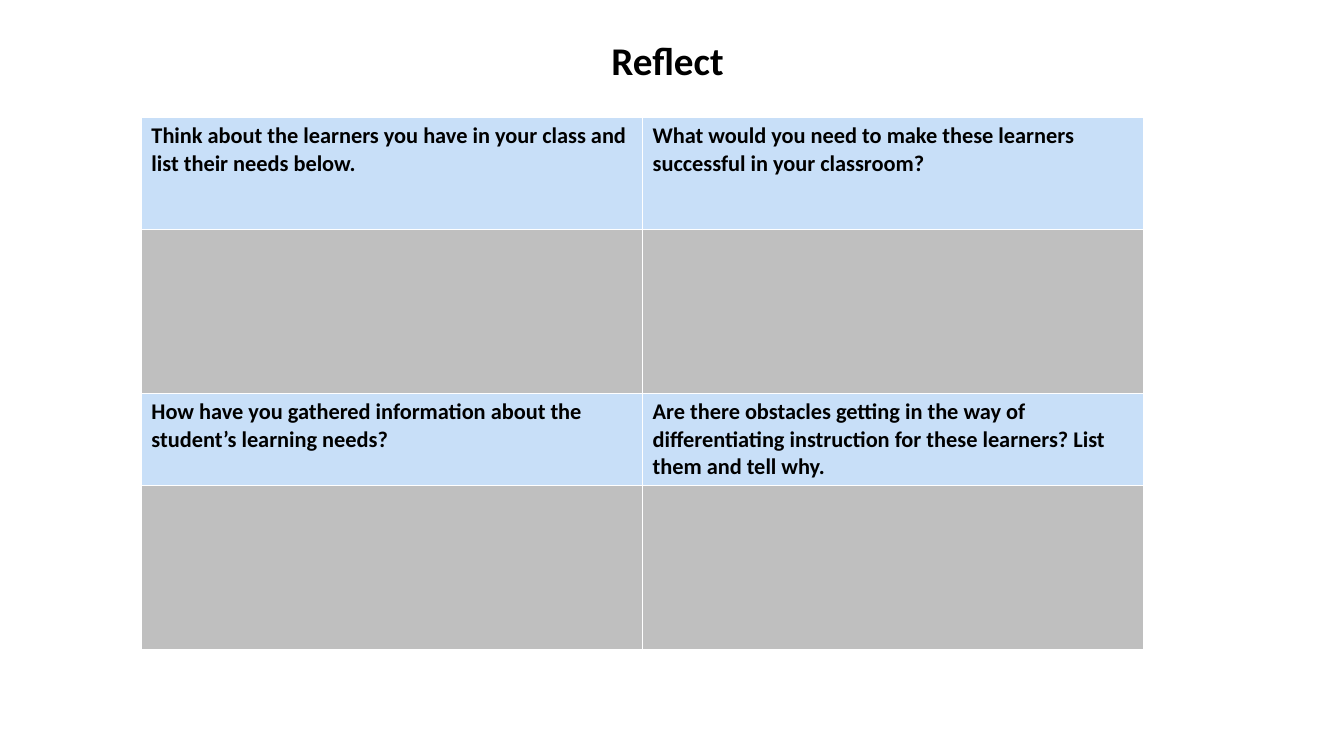
import pptx
import pptx.dml.color
import pptx.enum.text
import pptx.oxml
import pptx.oxml.ns
import pptx.util

Pt = pptx.util.Pt

PROMPT_BLUE = "C8DFF8"
ANSWER_GREY = "BFBFBF"
PROMPT_HEIGHTS = [80, 66]
ANSWER_HEIGHT = 117
PROMPTS = [
    ("Think about the learners you have in your class and list their needs below.",
     "What would you need to make these learners successful in your classroom?"),
    ("How have you gathered information about the student’s learning needs?",
     "Are there obstacles getting in the way of differentiating instruction "
     "for these learners? List them and tell why."),
]


def color(hex_string):
    return pptx.dml.color.RGBColor.from_string(hex_string)


class SlideBuilder:
    font_name = "Calibri"
    text_color = "000000"
    border_color = "FFFFFF"
    border_width = 1

    def __init__(self, slide):
        self.slide = slide

    def style(self, paragraph, size):
        paragraph.font.name = self.font_name
        paragraph.font.size = Pt(size)
        paragraph.font.bold = True
        paragraph.font.color.rgb = color(self.text_color)

    def title(self, text, left, top, width, height):
        box = self.slide.shapes.add_textbox(Pt(left), Pt(top), Pt(width), Pt(height))
        frame = box.text_frame
        frame.word_wrap = True
        frame.vertical_anchor = pptx.enum.text.MSO_ANCHOR.MIDDLE
        paragraph = frame.paragraphs[0]
        paragraph.text = text
        paragraph.alignment = pptx.enum.text.PP_ALIGN.CENTER
        self.style(paragraph, 28)

    def table(self, left, top, column_width, row_heights):
        frame = self.slide.shapes.add_table(
            len(row_heights), 2, Pt(left), Pt(top),
            Pt(2 * column_width), Pt(sum(row_heights)))
        table = frame.table
        table.first_row = False
        table.horz_banding = False
        for column in table.columns:
            column.width = Pt(column_width)
        for row, height in zip(table.rows, row_heights):
            row.height = Pt(height)
        return table

    def cell(self, cell, fill, text=""):
        self.borders(cell)
        cell.fill.solid()
        cell.fill.fore_color.rgb = color(fill)
        paragraph = cell.text_frame.paragraphs[0]
        paragraph.text = text
        self.style(paragraph, 16)

    def borders(self, cell):
        properties = cell._tc.get_or_add_tcPr()
        for side in "LRTB":
            properties.append(pptx.oxml.parse_xml(
                f'<a:ln{side} {pptx.oxml.ns.nsdecls("a")} w="{Pt(self.border_width)}">'
                f'<a:solidFill><a:srgbClr val="{self.border_color}"/></a:solidFill>'
                f'</a:ln{side}>'))


def main():
    presentation = pptx.Presentation()
    presentation.slide_width = Pt(960)
    presentation.slide_height = Pt(540)
    slide = presentation.slides.add_slide(presentation.slide_layouts[6])
    builder = SlideBuilder(slide)

    builder.title("Reflect ", 156, 22, 648, 42)

    row_heights = [height for prompt_height in PROMPT_HEIGHTS
                   for height in (prompt_height, ANSWER_HEIGHT)]
    table = builder.table(101, 84, 358, row_heights)
    for pair, prompts in enumerate(PROMPTS):
        for column, prompt in enumerate(prompts):
            builder.cell(table.cell(2 * pair, column), PROMPT_BLUE, prompt)
            builder.cell(table.cell(2 * pair + 1, column), ANSWER_GREY)

    presentation.save("out.pptx")


if __name__ == "__main__":
    main()
